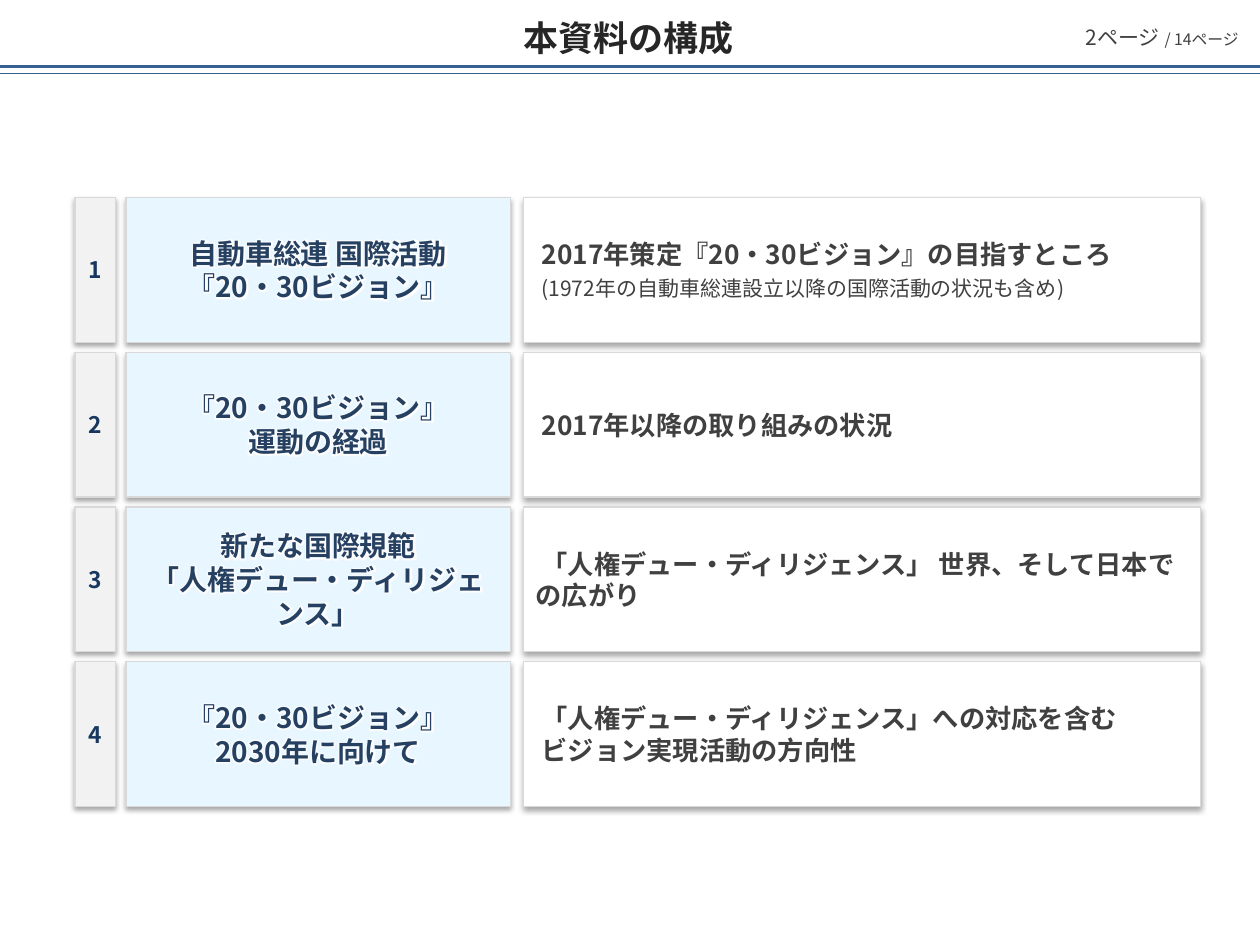
from lxml.etree import SubElement as Sub
from pptx import Presentation
from pptx.dml.color import RGBColor
from pptx.enum.shapes import MSO_CONNECTOR as Conn, MSO_SHAPE as Shape
from pptx.enum.text import MSO_ANCHOR as Anchor, MSO_AUTO_SIZE as Auto, PP_ALIGN as Align
from pptx.oxml import parse_xml
from pptx.oxml.ns import nsdecls, qn
from pptx.util import Cm, Pt

FONT = "Noto Sans CJK JP"
TOP, STEP, HIGH = 3.98, 3.12, 2.92
# Left edge and width of each column, in cm
COLS = [(1.51, 0.82), (2.54, 7.75), (10.55, 13.65)]
ROWS = [
    (["自動車総連 国際活動", "『20・30ビジョン』"],
     [" 2017年策定『20・30ビジョン』の目指すところ",
      [" ", ("(1972年の自動車総連設立以降の国際活動の状況も含め)", 12, False)]]),
    (["『20・30ビジョン』", "運動の経過"],
     [" 2017年以降の取り組みの状況"]),
    (["新たな国際規範", "「人権デュー・ディリジェンス」"],
     [" 「人権デュー・ディリジェンス」 世界、そして日本での広がり"]),
    (["『20・30ビジョン』", "2030年に向けて"],
     [" 「人権デュー・ディリジェンス」への対応を含む",
      " ビジョン実現活動の方向性"]),
]


def paint(part, color):
    part.solid()
    part.fore_color.rgb = RGBColor.from_string(color)


def write(shape, paras, size=12, color="404040", bold=False,
          align=Align.LEFT, anchor=Anchor.MIDDLE, glow=False):
    """Each paragraph is a string or a list of strings and (text, size, bold)."""
    frame = shape.text_frame
    frame.word_wrap = True
    frame.auto_size = Auto.NONE
    frame.vertical_anchor = anchor
    for i, runs in enumerate(paras):
        para = frame.add_paragraph() if i else frame.paragraphs[0]
        para.alignment = align
        for item in [runs] if isinstance(runs, str) else runs:
            text, pts, heavy = (item, size, bold) if isinstance(item, str) else item
            run = para.add_run()
            run.text = text
            font = run.font
            font.size, font.bold, font.name = Pt(pts), heavy, FONT
            paint(font.fill, color)
            props = run._r.get_or_add_rPr()
            Sub(props, qn("a:ea"), typeface=FONT)
            if glow:
                props.find(qn("a:solidFill")).addnext(parse_xml(
                    f'<a:effectLst {nsdecls("a")}><a:glow rad="63500">'
                    '<a:srgbClr val="FFFFFF"/></a:glow></a:effectLst>'))


def place(shape, left, top, wide, high):
    shape.left, shape.top, shape.width, shape.height = map(Cm, (left, top, wide, high))


def box(slide, left, top, wide, high, fill, edge, weight=0.75):
    shape = slide.shapes.add_shape(
        Shape.RECTANGLE, Cm(left), Cm(top), Cm(wide), Cm(high))
    shape.shadow.inherit = False
    paint(shape.fill, fill)
    paint(shape.line.fill, edge)
    shape.line.width = Pt(weight)
    return shape


def shade(shape):
    """Give a card its soft shadow straight below."""
    effects = shape._element.spPr.find(qn("a:effectLst"))
    cast = Sub(effects, qn("a:outerShdw"), blurRad=str(Pt(3.1)), dist=str(Pt(1.8)),
               dir="5400000", algn="t", rotWithShape="0")
    black = Sub(cast, qn("a:srgbClr"), val="000000")
    Sub(black, qn("a:alpha"), val="35000")


def rule(slide, top, weight):
    line = slide.shapes.add_connector(
        Conn.STRAIGHT, Cm(-0.05), Cm(top), Cm(25.4), Cm(top))
    paint(line.line.fill, "376092")
    line.line.width = Pt(weight)
    Sub(line._element.spPr, qn("a:effectLst"))


def head(slide):
    box(slide, 0, 0, 25.4, 1.34, "FFFFFF", "FFFFFF", 2)
    rule(slide, 1.34, 1.5)
    rule(slide, 1.48, 0.75)
    title = slide.shapes.title
    place(title, -0.05, 0.2, 25.45, 1.12)
    write(title, ["本資料の構成"], size=20, color="262626", bold=True,
          align=Align.CENTER)
    # Bring the title in front of the header band
    slide.shapes._spTree.append(title._element)


def row(slide, index, topic, detail):
    looks = [
        ([str(index + 1)], "F2F2F2",
         dict(size=13, color="17375E", align=Align.CENTER)),
        (topic, "E7F6FF",
         dict(size=16, color="254061", align=Align.CENTER, glow=True)),
        (detail, "FFFFFF", dict(size=15)),
    ]
    for (left, wide), (paras, fill, style) in zip(COLS, looks):
        card = box(slide, left, TOP + index * STEP, wide, HIGH, fill, "D9D9D9")
        shade(card)
        write(card, paras, bold=True, **style)


def main():
    deck = Presentation()
    deck.slide_width, deck.slide_height = Cm(25.4), Cm(19.05)
    slide = deck.slides.add_slide(deck.slide_layouts[5])
    head(slide)
    # Numbered agenda
    for index, (topic, detail) in enumerate(ROWS):
        row(slide, index, topic, detail)
    # Page count
    count = slide.shapes.add_textbox(Cm(20.32), Cm(0.38), Cm(4.9), Cm(0.77))
    write(count, [["2ページ ", ("/ 14ページ", 9, False)]],
          align=Align.RIGHT, anchor=Anchor.TOP)
    deck.save("out.pptx")


if __name__ == "__main__":
    main()
